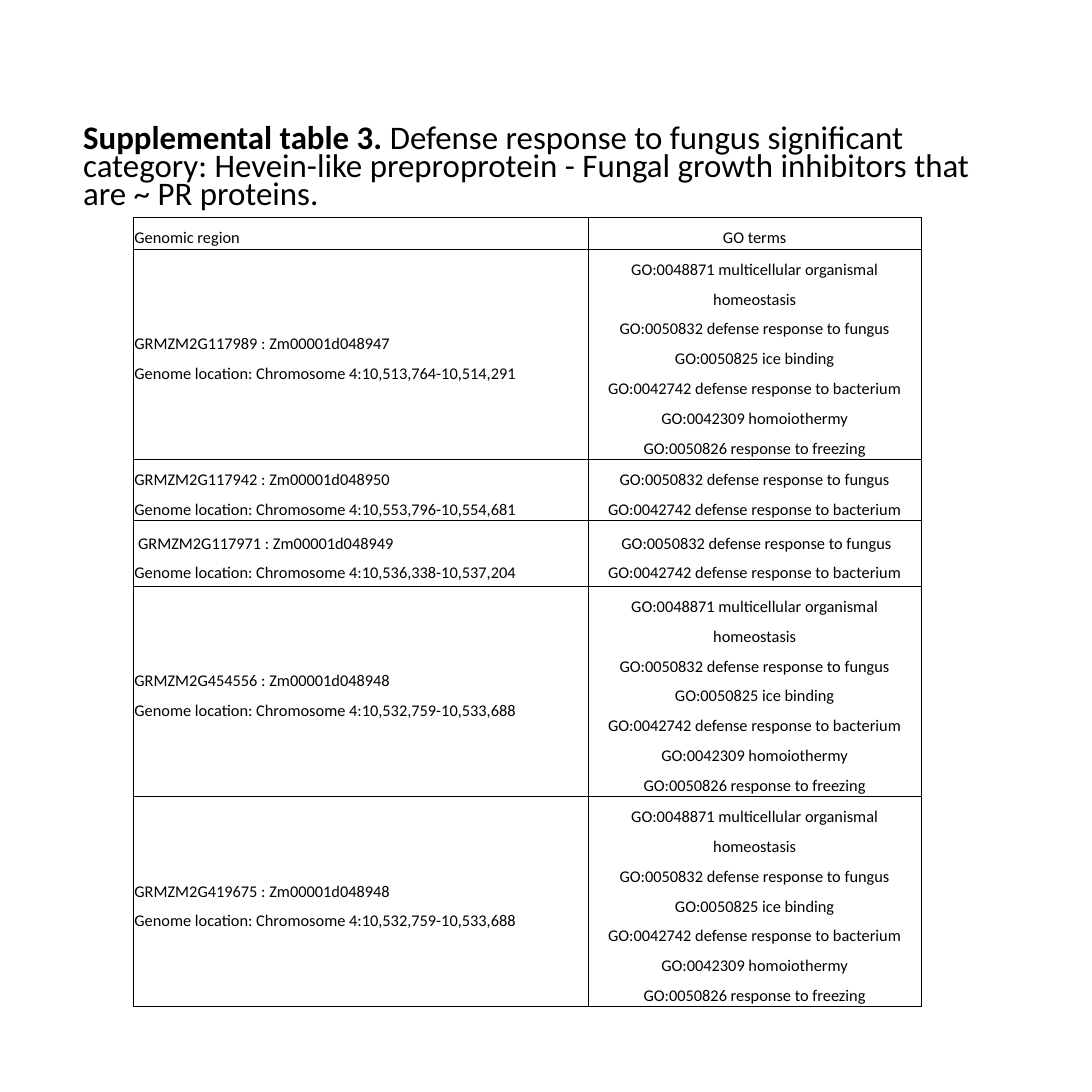
from copy import deepcopy
from pptx import Presentation
from pptx.dml.color import RGBColor
from pptx.enum.text import MSO_ANCHOR as Anchor, MSO_AUTO_SIZE as Auto, PP_ALIGN as Align
from pptx.oxml import parse_xml
from pptx.oxml.ns import nsdecls, qn
from pptx.util import Inches, Pt

BLACK = RGBColor(0, 0, 0)
FONT = "Calibri"
HEADS = ["Genomic region", "GO terms"]
FUNGUS = "GO:0050832 defense response to fungus"
GERM = "GO:0042742 defense response to bacterium"
SHORT = [FUNGUS, GERM]
LONG = [
    "GO:0048871 multicellular organismal homeostasis",
    FUNGUS,
    "GO:0050825 ice binding",
    GERM,
    "GO:0042309 homoiothermy",
    "GO:0050826 response to freezing",
]
GENES = [
    ("GRMZM2G117989 : Zm00001d048947", "10,513,764-10,514,291", LONG),
    ("GRMZM2G117942 : Zm00001d048950", "10,553,796-10,554,681", SHORT),
    (" GRMZM2G117971 : Zm00001d048949", "10,536,338-10,537,204", [" " + FUNGUS, GERM]),
    ("GRMZM2G454556 : Zm00001d048948", "10,532,759-10,533,688", LONG),
    ("GRMZM2G419675 : Zm00001d048948", "10,532,759-10,533,688", LONG),
]
COLS = [5.41, 3.97]
ROWS = [0.2, 1.57, 0.59, 0.78, 1.57, 1.57]


def write(para, text, size=14, bold=False, align=Align.LEFT, space=1.5):
    para.alignment = align
    para.line_spacing = space
    for i, line in enumerate(text.split("\n")):
        if i:
            para.add_line_break()
        run = para.add_run()
        run.text = line
        font = run.font
        font.name, font.size, font.bold = FONT, Pt(size), bold
        font.color.rgb = BLACK
    for gap in para._p.findall(qn("a:br")):
        gap.append(deepcopy(run.font._element))


def border(cell):
    props = cell._tc.get_or_add_tcPr()
    for i, side in enumerate("LRTB"):
        props.insert(i, parse_xml(
            f'<a:ln{side} {nsdecls("a")} w="{Pt(1)}"><a:solidFill>'
            f'<a:srgbClr val="{BLACK}"/></a:solidFill></a:ln{side}>'))


def fill_cell(cell, paras, align):
    cell.fill.background()
    border(cell)
    cell.vertical_anchor = Anchor.MIDDLE
    cell.margin_left = cell.margin_right = Inches(0.01)
    cell.margin_top = cell.margin_bottom = Inches(0.01)
    frame = cell.text_frame
    for i, text in enumerate(paras):
        para = frame.add_paragraph() if i else frame.paragraphs[0]
        write(para, text, align=align)


def add_title(slide, left, top, width, height):
    title = slide.shapes.title
    title.left, title.top = Inches(left), Inches(top)
    title.width, title.height = Inches(width), Inches(height)
    frame = title.text_frame
    frame.word_wrap = True
    frame.auto_size = Auto.NONE
    frame.vertical_anchor = Anchor.TOP
    para = frame.paragraphs[0]
    write(para, "Supplemental table 3.", size=28.2, bold=True, space=0.7)
    write(para, " Defense response to fungus significant category: Hevein-like "
          "preproprotein - Fungal growth inhibitors that are ~ PR proteins.",
          size=28.2, space=0.7)


def add_genes(slide, left, top, width, height):
    shape = slide.shapes.add_table(len(ROWS), len(COLS), Inches(left), Inches(top),
                                   Inches(width), Inches(height))
    table = shape.table
    table.first_row = table.horz_banding = False
    for col, size in zip(table.columns, COLS):
        col.width = Inches(size)
    for row, size in zip(table.rows, ROWS):
        row.height = Inches(size)
    shape.height = Inches(height)
    body = [([gene, f"Genome location: Chromosome 4:{place}"], ["\n".join(terms)])
            for gene, place, terms in GENES]
    for r, pair in enumerate([[[head] for head in HEADS]] + body):
        for c, align in enumerate([Align.LEFT, Align.CENTER]):
            fill_cell(table.cell(r, c), pair[c], align)


def main():
    deck = Presentation()
    deck.slide_width = deck.slide_height = Inches(13)
    slide = deck.slides.add_slide(deck.slide_layouts[5])
    add_title(slide, 0.89, 1.47, 11.21, 1.12)
    add_genes(slide, 1.59, 2.59, sum(COLS), 9.14)
    deck.save("out.pptx")


if __name__ == "__main__":
    main()
